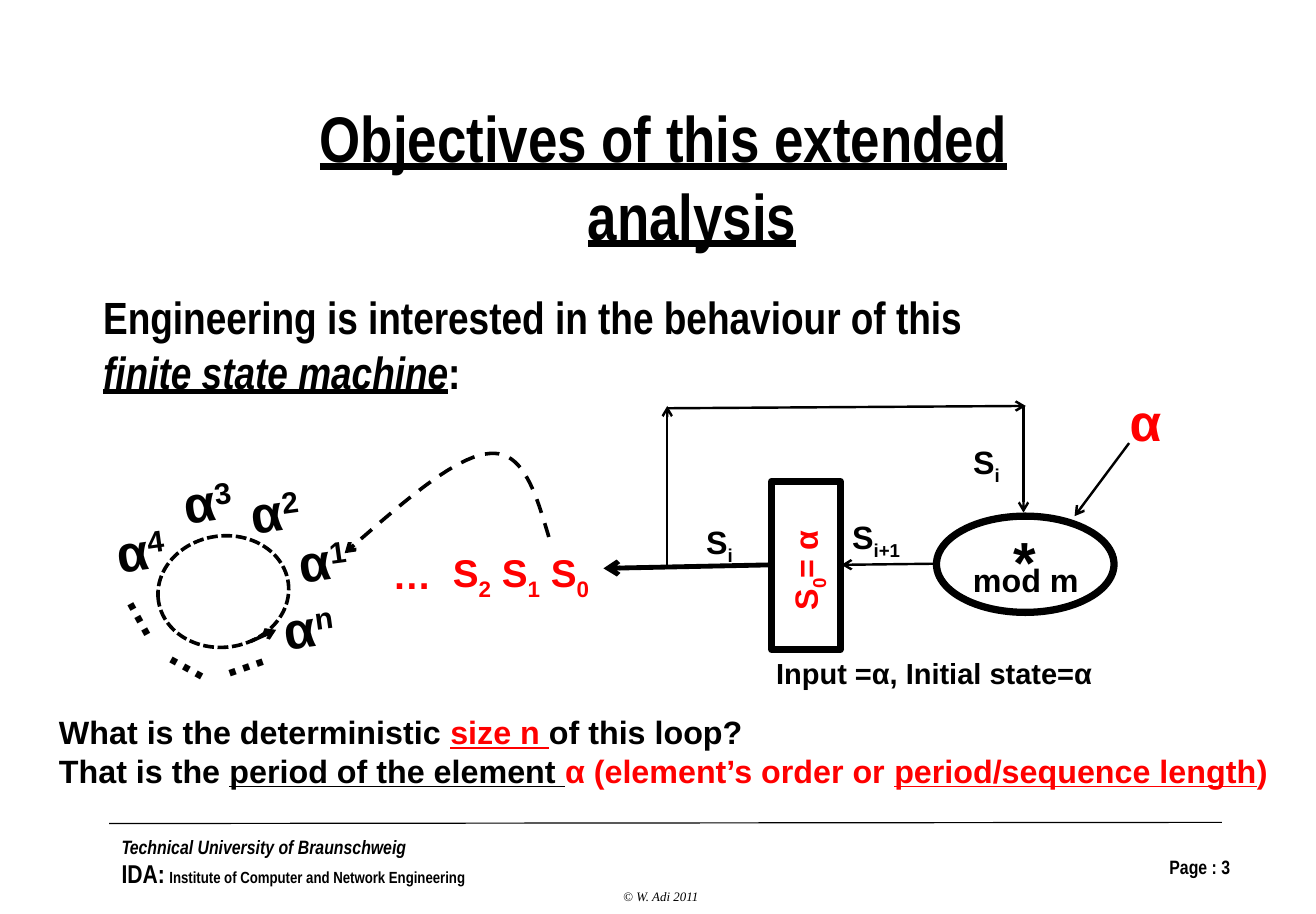
from lxml import etree
from pptx import Presentation
from pptx.dml.color import RGBColor
from pptx.enum.dml import MSO_LINE
from pptx.enum.shapes import MSO_CONNECTOR, MSO_SHAPE
from pptx.enum.text import MSO_ANCHOR, MSO_AUTO_SIZE, PP_ALIGN
from pptx.oxml.ns import qn
from pptx.util import Inches, Pt

BLACK = RGBColor(0, 0, 0)
RED = RGBColor(255, 0, 0)
LEFT, CENTER, RIGHT = PP_ALIGN.LEFT, PP_ALIGN.CENTER, PP_ALIGN.RIGHT
TOP, MIDDLE = MSO_ANCHOR.TOP, MSO_ANCHOR.MIDDLE
DASH, SHORT_DASH = MSO_LINE.DASH, MSO_LINE.SQUARE_DOT
ELLIPSE, RECT = MSO_SHAPE.OVAL, MSO_SHAPE.RECTANGLE
SANS, NARROW, SERIF = "Arial", "Arial Narrow", "Times New Roman"

# A run is (text, marks, size); marks: b bold, i italic, u underline,
# r red, _ subscript, ^ superscript. The size may be left out.
TITLE = [[("Objectives of this extended analysis", "bu")]]

# box, paragraphs, size, font, alignment, anchor
BLOCKS = [
    ((0.79, 2.44, 9.21, 1.05),
     [[("Engineering is interested in the behaviour of this", "b")],
      [("finite state machine", "biu"), (":", "b")]],
     28, NARROW, LEFT, MIDDLE),
    ((0.41, 6.09, 10.68, 0.78),
     [[("What is the deterministic ", "b"), ("size n ", "bur"),
       ("of this loop?", "b")],
      [("That is the ", "b"), ("period of the element ", "bu"),
       ("α (element’s order or ", "br"),
       ("period/sequence length", "bur"), (")", "br")]],
     20, SANS, LEFT, TOP),
    ((8.14, 7.32, 2.56, 0.3), [[("Page : 3", "b")]],
     12, NARROW, RIGHT, TOP),
    ((0.95, 7.15, 5.17, 0.6),
     [[("Technical University of Braunschweig", "bi")],
      [("IDA:", "b", 16), (" ", "b"),
       ("Institute of Computer and Network Engineering", "b", 10)]],
     12, NARROW, LEFT, TOP),
    ((5.26, 7.61, 0.87, 0.24), [[("© ", ""), ("W. Adi 2011", "i")]],
     8, SERIF, CENTER, MIDDLE),
]

# centre, runs, size, rotation
TILT = -7.9
LABELS = [
    ((6.96, 4.92), [("S", "br"), ("0", "br_"), ("= α", "br")], 20, -90),
    ((9.87, 3.63), [("α", "br")], 32, 0),
    ((3.55, 4.95), [("…", "br")], 24, 0),
    ((4.49, 4.96), [("S", "br"), ("2", "br_"), (" S", "br"), ("1", "br_"),
                    (" S", "br"), ("0", "br_")], 24, 0),
    ((1.31, 5.28), [("…", "b")], 28, 61.2),
    ((1.67, 5.65), [("…", "b")], 28, 29),
    ((2.08, 5.64), [("…", "b")], 28, -19.2),
    ((6.2, 4.69), [("S", "b"), ("i", "b_")], 20, 0),
    ((7.55, 4.65), [("S", "b"), ("i+1", "b_")], 20, 0),
    ((8.5, 4), [("S", "b"), ("i", "b_")], 20, 0),
    ((8.83, 4.83), [("*", "b")], 36, 0),
    ((8.84, 5), [("mod m", "b")], 20, 0),
    ((8.05, 5.8), [("Input =α, Initial state=α", "b")], 18, 0),
]
LOOP_POWERS = {"1": (2.78, 4.83), "2": (2.37, 4.4), "3": (1.79, 4.32),
               "4": (1.21, 4.74), "n": (2.66, 5.4)}
LABELS += [(centre, [("α", "b"), (power, "b^")], 32, TILT)
           for power, centre in LOOP_POWERS.items()]

# kind, box, line width, dash, rotation
OUTLINES = [
    (ELLIPSE, (1.36, 4.62, 1.13, 0.96), 2.25, SHORT_DASH, TILT),
    (ELLIPSE, (8.07, 4.45, 1.53, 0.83), 4.5, None, 0),
    (RECT, (6.65, 4.15, 0.59, 1.45), 4.5, None, 0),
]

# start, end, width, has arrowhead
LINES = [
    ((0.94, 7.1), (10.53, 7.09), 0.75, False),
    ((2.16, 5.53), (2.38, 5.43), 2.25, True),
    ((8.07, 4.86), (7.25, 4.87), 1.5, True),
    ((9.73, 3.82), (9.26, 4.45), 1.5, True),
    ((5.75, 4.91), (5.75, 3.5), 1.5, True),
    ((5.75, 3.52), (8.84, 3.5), 1.5, True),
    ((8.82, 3.5), (8.82, 4.42), 1.5, True),
    ((6.65, 4.87), (5.2, 4.9), 3, True),
]

# Bezier segments of the dashed link from the sequence to the loop
LINK = [((4.73, 4.63), (4.62, 4.26), (4.51, 3.88), (4.22, 3.91)),
        ((4.22, 3.91), (3.92, 3.93), (3.45, 4.35), (2.97, 4.77))]
STEPS = 20


def inches(values):
    return [Inches(v) for v in values]


def add_runs(p, runs, size, font):
    for text, marks, *own_size in runs:
        r = p.add_run()
        r.text = text
        f = r.font
        f.name = font
        f.size = Pt(own_size[0] if own_size else size)
        f.bold = "b" in marks
        f.italic = "i" in marks
        f.underline = "u" in marks
        f.color.rgb = RED if "r" in marks else BLACK
        for mark, shift in (("_", "-25000"), ("^", "30000")):
            if mark in marks:
                r._r.get_or_add_rPr().set("baseline", shift)


def fill_text(sp, paragraphs, size, font, align, anchor, wrap=True):
    tf = sp.text_frame
    tf.word_wrap = wrap
    tf.auto_size = MSO_AUTO_SIZE.NONE
    tf.vertical_anchor = anchor
    for i, runs in enumerate(paragraphs):
        p = tf.add_paragraph() if i else tf.paragraphs[0]
        p.alignment = align
        add_runs(p, runs, size, font)


def style_line(sp, width, dash=None, arrow=False):
    sp.line.color.rgb = BLACK
    sp.line.width = Pt(width)
    if dash:
        sp.line.dash_style = dash
    if arrow:
        etree.SubElement(sp.line._get_or_add_ln(), qn("a:tailEnd"), type="arrow")


def bezier(segment, t):
    weights = ((1 - t) ** 3, 3 * t * (1 - t) ** 2, 3 * t * t * (1 - t), t ** 3)
    return [sum(w * pt[axis] for w, pt in zip(weights, segment))
            for axis in (0, 1)]


def main():
    prs = Presentation()
    prs.slide_width, prs.slide_height = inches((11.34, 7.88))
    s = prs.slides.add_slide(prs.slide_layouts[5])
    shapes = s.shapes

    title = shapes.title
    title.left, title.top, title.width, title.height = inches((2.01, 0.79, 7.41, 1.45))
    fill_text(title, TITLE, 40, NARROW, CENTER, MIDDLE)
    pPr = title.text_frame.paragraphs[0]._p.get_or_add_pPr()
    pPr.set("marL", str(Inches(0.5)))
    pPr.set("indent", str(Inches(-0.5)))

    for kind, box, width, dash, rotation in OUTLINES:
        sp = shapes.add_shape(kind, *inches(box))
        sp.shadow.inherit = False
        sp.fill.background()
        sp.rotation = rotation
        style_line(sp, width, dash)

    for start, end, width, arrow in LINES:
        line = shapes.add_connector(MSO_CONNECTOR.STRAIGHT, *inches(start + end))
        style_line(line, width, arrow=arrow)
        etree.SubElement(line._element.spPr, qn("a:effectLst"))

    points = [inches(bezier(segment, k / STEPS))
              for segment in LINK for k in range(1, STEPS + 1)]
    builder = shapes.build_freeform(*inches(LINK[0][0]))
    builder.add_line_segments(points, close=False)
    link = builder.convert_to_shape()
    link.shadow.inherit = False
    link.fill.background()
    style_line(link, 2.25, DASH, arrow=True)

    for box, paragraphs, size, font, align, anchor in BLOCKS:
        sp = shapes.add_textbox(*inches(box))
        fill_text(sp, paragraphs, size, font, align, anchor, wrap=align == LEFT)

    for (x, y), runs, size, rotation in LABELS:
        letters = sum(len(run[0]) for run in runs)
        w = 0.2 + letters * size * 0.6 / 72
        h = 0.1 + size * 1.2 / 72
        sp = shapes.add_textbox(*inches((x - w / 2, y - h / 2, w, h)))
        sp.rotation = rotation
        fill_text(sp, [runs], size, SANS, CENTER, MIDDLE, wrap=False)

    prs.save("out.pptx")


if __name__ == "__main__":
    main()
